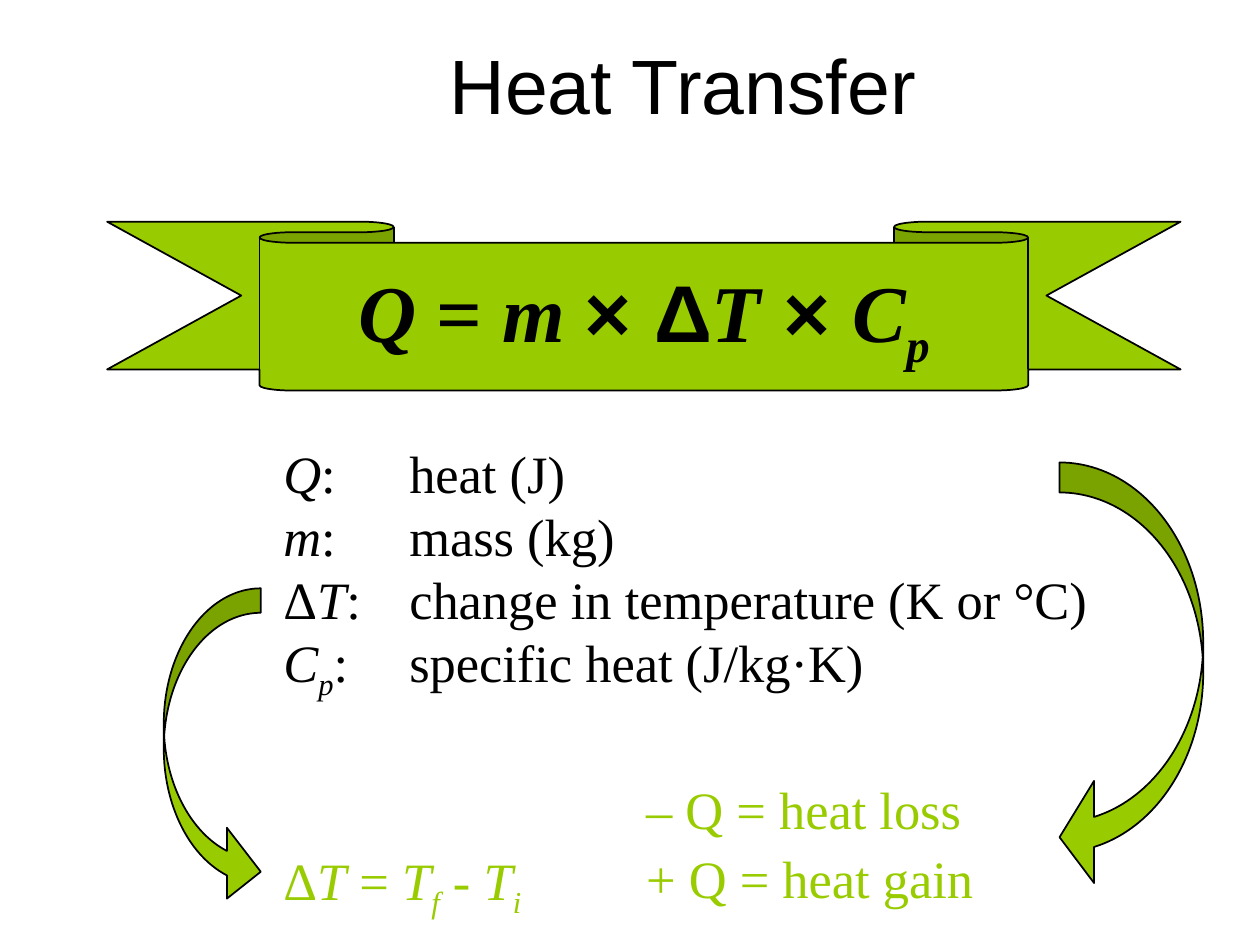
from lxml import etree
from pptx import Presentation
from pptx.dml import color
from pptx.enum import shapes, text
from pptx.oxml import ns
from pptx.util import Inches, Pt

THEME = {
    "ink": color.RGBColor(0, 0, 0),
    "green": color.RGBColor(0x99, 0xCC, 0),
    "sans": "Arial",
    "serif": "Times New Roman",
    "title": 44,
    "formula": 46,
    "body": 30,
}

TITLE = [[("Heat Transfer", "")]]
FORMULA = [[
    ("Q", "i"), (" = ", ""), ("m ", "i"), ("× Δ", "a"), ("T", "i"),
    (" × ", "a"), ("C", "i"), ("p", "is"),
]]
DEFINITIONS = [
    [("Q", "i"), (":\theat (J)", "")],
    [("m", "i"), (":\tmass (kg)", "")],
    [("Δ", ""), ("T", "i"), (":\tchange in temperature (K or °C)", "")],
    [("C", "i"), ("p", "is"), (":\tspecific heat (J/kg·K)", "")],
]
DELTA = [[
    ("Δ", ""), ("T", "i"), (" = ", ""), ("T", "i"), ("f", "is"),
    (" - ", ""), ("T", "i"), ("i", "is"),
]]
SIGNS = [[("– Q = heat loss", "")], [("+ Q = heat gain", "")]]

CALLOUTS = [
    {"arrow": (1.3, 4.67, 0.77, 2.53), "bend": (0.252, 0.73, 0.349), "flip": False,
     "label": (2.15, 6.57, 2.38, 0.75), "lines": DELTA, "spacing": 1.2},
    {"arrow": (8.41, 3.67, 1.14, 3.38), "bend": (0.209, 0.711, 0.24), "flip": True,
     "label": (5.03, 6.12, 3.54, 1.2), "lines": SIGNS, "spacing": None},
]


def write(box, lines, size="body", font="serif", ink="ink", bold=False,
          align=text.PP_ALIGN.LEFT, anchor=text.MSO_ANCHOR.TOP,
          wrap=True, spacing=None, after=0, tab=None):
    frame = box.text_frame
    frame.word_wrap = wrap
    frame.vertical_anchor = anchor
    for index, line in enumerate(lines):
        para = frame.paragraphs[0] if index == 0 else frame.add_paragraph()
        para.alignment = align
        para.space_after = Pt(after)
        para.line_spacing = spacing
        if tab:
            stops = etree.SubElement(para._p.get_or_add_pPr(), ns.qn("a:tabLst"))
            etree.SubElement(stops, ns.qn("a:tab"), pos=str(Inches(tab)), algn="l")
        for words, style in line:
            span = para.add_run()
            span.text = words
            span.font.name = THEME["sans" if "a" in style else font]
            span.font.size = Pt(THEME[size])
            span.font.color.rgb = THEME[ink]
            span.font.bold = bold
            span.font.italic = "i" in style
            if "s" in style:
                span.font._element.set("baseline", "-25000")


def add_text(parent, place, lines, **style):
    box = parent.shapes.add_textbox(*map(Inches, place))
    write(box, lines, **style)


def add_green(parent, kind, place, adjustments):
    shape = parent.shapes.add_shape(kind, *map(Inches, place))
    shape.shadow.inherit = False
    shape.fill.solid()
    shape.fill.fore_color.rgb = THEME["green"]
    shape.line.color.rgb = THEME["ink"]
    shape.line.width = Pt(1)
    for index, value in enumerate(adjustments):
        shape.adjustments[index] = value
    return shape


def main():
    deck = Presentation()
    deck.slide_width, deck.slide_height = Inches(10), Inches(7.5)
    page = deck.slides.add_slide(deck.slide_layouts[6])
    centred = {"align": text.PP_ALIGN.CENTER, "anchor": text.MSO_ANCHOR.MIDDLE}

    add_text(page, (0.84, 0.25, 9.16, 0.83), TITLE, size="title", font="sans", **centred)
    ribbon = add_green(page, shapes.MSO_SHAPE.DOWN_RIBBON,
                       (0.85, 1.76, 8.52, 1.34), (0.125, 0.716))
    write(ribbon, FORMULA, size="formula", bold=True, wrap=False, **centred)
    add_text(page, (2.15, 3.45, 6.77, 2.1), DEFINITIONS, tab=1)

    for callout in CALLOUTS:
        group = page.shapes.add_group_shape()
        arrow = add_green(group, shapes.MSO_SHAPE.CURVED_RIGHT_ARROW,
                          callout["arrow"], callout["bend"])
        if callout["flip"]:
            arrow._element.spPr.get_or_add_xfrm().set("flipH", "1")
        add_text(group, callout["label"], callout["lines"], ink="green",
                 spacing=callout["spacing"], after=3)

    deck.save("out.pptx")


if __name__ == "__main__":
    main()
